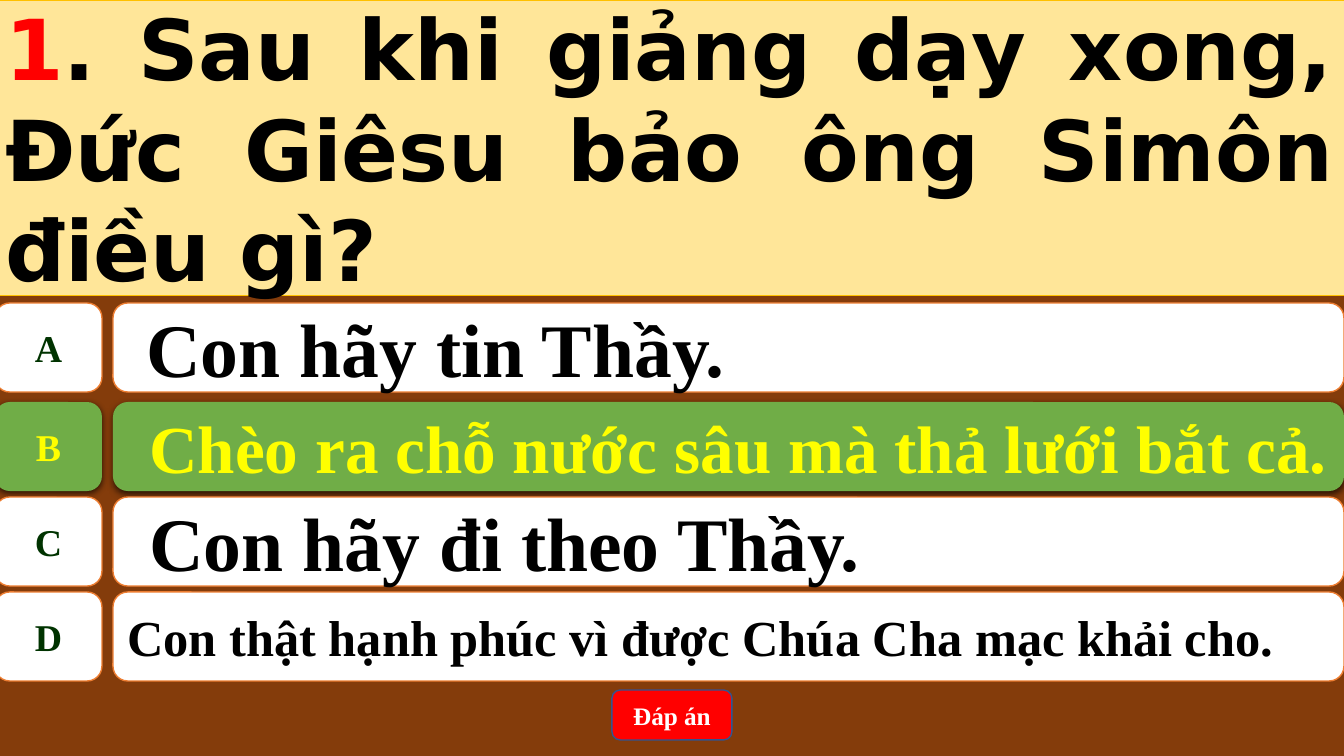
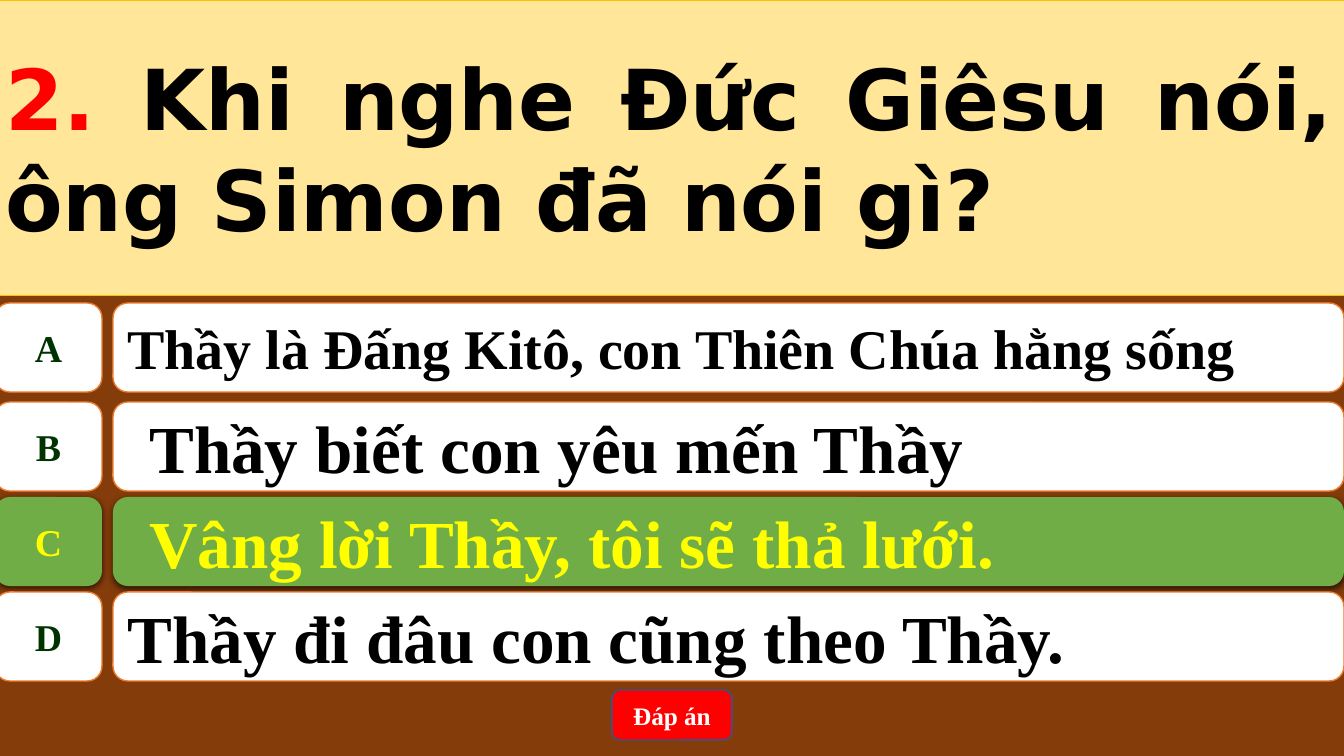
from lxml.etree import SubElement
from pptx import Presentation
from pptx.dml.color import RGBColor
from pptx.enum.shapes import MSO_SHAPE as KIND
from pptx.enum.text import MSO_ANCHOR, MSO_AUTO_SIZE, PP_ALIGN
from pptx.oxml.ns import qn
from pptx.util import Pt

SCALE = 914400 / 100.8
WIDE, HIGH = 1344, 756
SERIF, SANS = "Times New Roman", "DejaVu Sans"
WHITE, BLACK, RED, YELLOW = "FFFFFF", "000000", "FF0000", "FFFF00"
BROWN, CREAM, GOLD, ORANGE = "843C0B", "FFE699", "FFC000", "ED7D31"
GREEN, FOREST, NAVY = "70AD47", "003300", "325491"

EDGE = -5            # the bands start just off the left side
TOPS = 303, 402, 497, 592
INSET = 10

# number, question, right letter, answers as (text, size, indent)
QUIZ = [
    ("1", ". Sau khi giảng dạy xong, Đức Giêsu bảo ông Simôn điều gì?", "B", [
        ("Con hãy tin Thầy.", 54, 19),
        ("Chèo ra chỗ nước sâu mà thả lưới bắt cả.", 48, 22),
        ("Con hãy đi theo Thầy.", 54, 22),
        ("Con thật hạnh phúc vì được Chúa Cha mạc khải cho.", 36, 0),
    ]),
    ("2. ", "Khi nghe Đức Giêsu nói, ông Simon đã nói gì?", "C", [
        ("Thầy là Đấng Kitô, con Thiên Chúa hằng sống", 40, 0),
        ("Thầy biết con yêu mến Thầy", 48, 22),
        ("Vâng lời Thầy, tôi sẽ thả lưới.", 48, 22),
        ("Thầy đi đâu con cũng theo Thầy.", 48, 0),
    ]),
]


def px(n):
    return round(n * SCALE)


def rgb(code):
    return RGBColor.from_string(code)


def paint(shape, fill, line=None, width=1):
    shape.shadow.inherit = False
    shape.fill.solid()
    shape.fill.fore_color.rgb = rgb(fill)
    if line:
        shape.line.color.rgb = rgb(line)
        shape.line.width = Pt(width)
    else:
        shape.line.fill.background()


def shade(shape):
    """Add a soft black shadow straight below a painted shape."""
    effects = shape._element.spPr.find(qn("a:effectLst"))
    outer = SubElement(effects, qn("a:outerShdw"), blurRad="57150",
                       dist="19050", dir="5400000", algn="ctr", rotWithShape="0")
    tint = SubElement(outer, qn("a:srgbClr"), val=BLACK)
    SubElement(tint, qn("a:alpha"), val="63000")


def write(shape, *runs, size, font=SERIF, align=PP_ALIGN.LEFT, indent=0, wrap=True):
    """Fill the shape with bold runs, each a pair of text and colour."""
    frame = shape.text_frame
    frame.auto_size = MSO_AUTO_SIZE.NONE
    frame.word_wrap = wrap
    frame.vertical_anchor = MSO_ANCHOR.MIDDLE
    frame.margin_left = px(INSET + indent)
    para = frame.paragraphs[0]
    para.alignment = align
    for text, color in runs:
        run = para.add_run()
        run.text = text
        face = run.font
        face.name, face.size, face.bold = font, Pt(size), True
        face.color.rgb = rgb(color)


def block(shapes, kind, box, fill, line=None):
    shape = shapes.add_shape(kind, *map(px, box))
    paint(shape, fill, line)
    return shape


def ask(slide, box, number, text):
    title = slide.shapes.title
    title.left, title.top, title.width, title.height = map(px, box)
    paint(title, CREAM, GOLD, 0.5)
    write(title, (number, RED), (text, BLACK), size=60, font=SANS,
          align=PP_ALIGN.JUSTIFY)


def choice(slide, box, letter, answer, right):
    """Place a letter tab and its answer bar; the right one is lit green."""
    left, top, width, height = box
    tab, gap = 107, 11
    start = left + tab + gap
    text, size, indent = answer
    fill, line = (GREEN, None) if right else (WHITE, ORANGE)
    shapes = slide.shapes.add_group_shape().shapes
    key = block(shapes, KIND.FLOWCHART_ALTERNATE_PROCESS,
                (left, top, tab, height), fill, line)
    bar = block(shapes, KIND.ROUNDED_RECTANGLE,
                (start, top, left + width - start, height), fill, line)
    write(key, (letter, YELLOW if right else FOREST), size=27,
          align=PP_ALIGN.CENTER, wrap=False)
    write(bar, (text, YELLOW if right else BLACK), size=size, indent=indent)
    if right:
        shade(key)
        shade(bar)


def button(slide, box):
    shape = block(slide.shapes, KIND.ROUNDED_RECTANGLE, box, RED, NAVY)
    write(shape, ("Đáp án", WHITE), size=18, align=PP_ALIGN.CENTER)


def build(deck, number, text, right, answers):
    slide = deck.slides.add_slide(deck.slide_layouts[5])
    back = slide.background.fill
    back.solid()
    back.fore_color.rgb = rgb(BROWN)
    span = WIDE - EDGE
    ask(slide, (EDGE, 0, span, 295), number, text)
    for letter, top, answer in zip("ABCD", TOPS, answers):
        choice(slide, (EDGE, top, span, 89), letter, answer, letter == right)
    button(slide, (612, 690, 120, 50))


def main():
    deck = Presentation()
    deck.slide_width, deck.slide_height = px(WIDE), px(HIGH)
    for item in QUIZ:
        build(deck, *item)
    deck.save("out.pptx")


if __name__ == "__main__":
    main()
